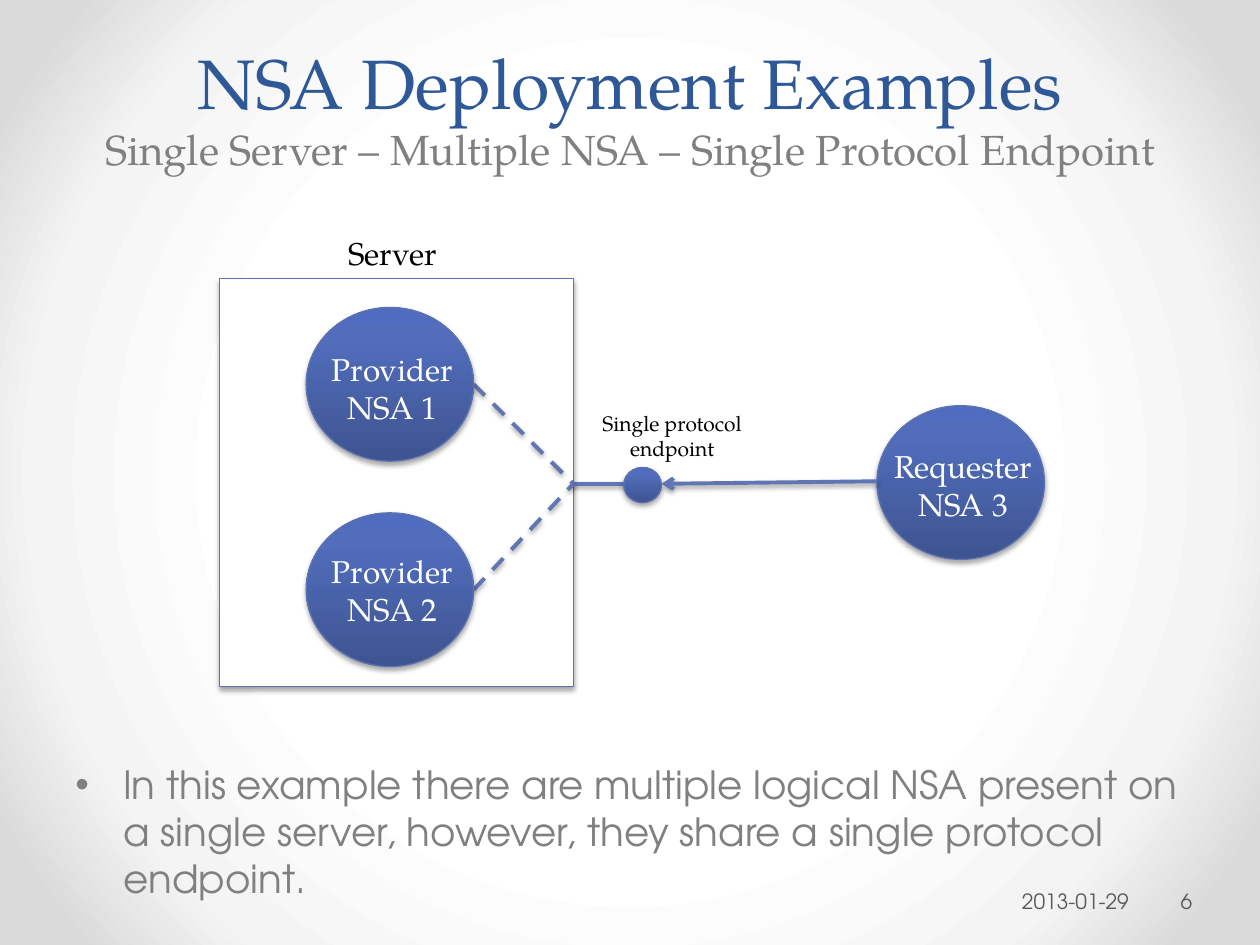
from dataclasses import dataclass

from lxml import etree
from pptx import Presentation
from pptx.dml.color import RGBColor
from pptx.enum import dml, shapes, text
from pptx.oxml.ns import qn
from pptx.util import Inches, Pt


@dataclass(frozen=True)
class Theme:
    serif: str = "TeX Gyre Pagella"
    sans: str = "TeX Gyre Adventor"
    title: str = "2F5897"
    grey: str = "808080"
    footer: str = "595959"
    black: str = "000000"
    white: str = "FFFFFF"
    outline: str = "5C72B2"
    link: str = "6076B4"
    node: tuple = ((0, "3E5490"), (80, "516DBB"), (100, "4F6CBE"))
    backdrop: tuple = ((50, "FFFFFF"), (76, "F4F4F4"), (92, "DADADA"))
    title_size: float = 40
    subtitle_size: float = 24
    body_size: float = 22.2
    label_size: float = 18
    small_size: float = 12


THEME = Theme()
ALIGN = text.PP_ALIGN
ANCHOR = text.MSO_ANCHOR


def add_node(parent, tag, **attributes):
    values = {key: str(value) for key, value in attributes.items()}
    return etree.SubElement(parent, qn(tag), values)


def set_gradient(fill, parent, stops, angle=None):
    """Fill with the stops: linear at an angle, or circular from the centre."""
    fill.gradient()
    gradient = parent.find(qn("a:gradFill"))
    for child in list(gradient):
        gradient.remove(child)
    stop_list = add_node(gradient, "a:gsLst")
    for position, color in stops:
        stop = add_node(stop_list, "a:gs", pos=position * 1000)
        add_node(stop, "a:srgbClr", val=color)
    if angle is None:
        circle = add_node(gradient, "a:path", path="circle")
        add_node(circle, "a:fillToRect", l=50000, t=50000, r=50000, b=50000)
    else:
        add_node(gradient, "a:lin", ang=angle * 60000, scaled=0)


def add_shadow(properties, distance, opacity):
    effects = properties.find(qn("a:effectLst"))
    if effects is None:
        effects = add_node(properties, "a:effectLst")
    shadow = add_node(effects, "a:outerShdw", blurRad=Pt(3.1), dist=Pt(distance),
                      dir=90 * 60000, rotWithShape=0)
    color = add_node(shadow, "a:srgbClr", val=THEME.black)
    add_node(color, "a:alpha", val=opacity * 1000)


def add_span(para, words, *, size, color, font):
    span = para.add_run()
    span.text = words
    span.font.size = Pt(size)
    span.font.name = font
    span.font.color.rgb = RGBColor.from_string(color)


def add_text(page, box, words, *, size=THEME.label_size, color=THEME.black,
             font=THEME.serif, align=ALIGN.CENTER, anchor=ANCHOR.TOP,
             wrap=True, left_inset=0.1, right_inset=0.1):
    frame = page.shapes.add_textbox(*map(Inches, box)).text_frame
    frame.word_wrap = wrap
    frame.vertical_anchor = anchor
    frame.margin_left, frame.margin_right = Inches(left_inset), Inches(right_inset)
    para = frame.paragraphs[0]
    para.alignment = align
    add_span(para, words, size=size, color=color, font=font)
    return para


def add_block(page, kind, box):
    shape = page.shapes.add_shape(kind, *map(Inches, box))
    shape.line.color.rgb = RGBColor.from_string(THEME.outline)
    shape.line.width = Pt(0.75)
    shape.shadow.inherit = False
    add_shadow(shape.element.spPr, 1.8, 35)
    return shape


def add_disc(page, box):
    disc = add_block(page, shapes.MSO_SHAPE.OVAL, box)
    set_gradient(disc.fill, disc.element.spPr, THEME.node, angle=270)


def add_link(page, start, end, *, dashed=False, arrow=False):
    link = page.shapes.add_connector(
        shapes.MSO_CONNECTOR.STRAIGHT, *map(Inches, start + end))
    link.line.color.rgb = RGBColor.from_string(THEME.link)
    link.line.width = Pt(2.25)
    if dashed:
        link.line.dash_style = dml.MSO_LINE.DASH
    if arrow:
        add_node(link.line._get_or_add_ln(), "a:tailEnd", type="arrow")
    add_shadow(link.element.spPr, 1.6, 38)


def draw_heading(page, box):
    para = add_text(page, box, "NSA Deployment Examples", size=THEME.title_size,
                    color=THEME.title, anchor=ANCHOR.BOTTOM)
    para.add_line_break()
    add_span(para, "Single Server – Multiple NSA – Single Protocol Endpoint",
             size=THEME.subtitle_size, color=THEME.grey, font=THEME.serif)


def draw_diagram(page, box):
    left, top, width, height = box

    def at(x, y):
        return left + x, top + y

    # Server with its caption
    server_width, server_top = 2.81, 0.4
    server = add_block(page, shapes.MSO_SHAPE.RECTANGLE,
                       at(0, server_top) + (server_width, height - server_top))
    server.fill.solid()
    server.fill.fore_color.rgb = RGBColor.from_string(THEME.white)
    add_text(page, at(0.92, 0) + (0.91, 0.4), "Server", wrap=False)

    # Links from the providers to the shared port, then to the endpoint
    node_width, node_height = 1.33, 1.22
    port = at(server_width, 2.03)
    provider_x, requester_x = 0.69, 5.22
    provider_tops = (0.63, 2.26)
    add_link(page, port, at(3.23, 2.03))
    add_disc(page, at(3.21, 1.9) + (0.3, 0.28))
    for y in provider_tops:
        edge = at(provider_x + node_width, y + node_height / 2)
        add_link(page, edge, port, dashed=True)

    # Agents: name, position, drop of the label inside the disc
    agents = (
        ("Provider NSA 1", provider_x, provider_tops[0], 0.29),
        ("Provider NSA 2", provider_x, provider_tops[1], 0.26),
        ("Requester NSA 3", requester_x, 1.41, 0.28),
    )
    for name, x, y, drop in agents:
        add_disc(page, at(x, y) + (node_width, node_height))
        add_text(page, at(x + 0.01, y + drop) + (1.35, 0.71), name,
                 color=THEME.white)

    # Request to the endpoint
    add_link(page, at(requester_x, 2.01), at(3.51, 2.03), arrow=True)
    add_text(page, at(server_width, 1.4) + (1.57, 0.5),
             "Single protocol endpoint", size=THEME.small_size)


def draw_body(page, box):
    para = add_text(
        page, box,
        "In this example there are multiple logical NSA present on a single "
        "server, however, they share a single protocol endpoint.",
        size=THEME.body_size, color=THEME.grey, font=THEME.sans, align=ALIGN.LEFT)
    para.space_before = Pt(THEME.body_size * 0.2)
    properties = para._p.get_or_add_pPr()
    properties.set("marL", str(Inches(0.38)))
    properties.set("indent", str(Inches(-0.38)))
    add_node(properties, "a:buFont", typeface="Arial")
    add_node(properties, "a:buChar", char="•")


def draw_footer(page, box):
    left, top, width, height = box
    style = dict(size=THEME.small_size, color=THEME.footer, font=THEME.sans,
                 anchor=ANCHOR.MIDDLE, right_inset=0.05)
    add_text(page, (left, top, 2.28, height), "2013-01-29",
             align=ALIGN.RIGHT, **style)
    number_width = 0.61
    add_text(page, (left + width - number_width, top, number_width, height), "6",
             align=ALIGN.LEFT, left_inset=0.03, **style)


def main():
    deck = Presentation()
    deck.slide_width, deck.slide_height = Inches(10), Inches(7.5)
    page = deck.slides.add_slide(deck.slide_layouts[6])
    fill = page.background.fill
    set_gradient(fill, page.element.cSld.bg.bgPr, THEME.backdrop)
    draw_heading(page, (0.5, 0, 9, 1.43))
    draw_diagram(page, (1.74, 1.81, 6.58, 3.64))
    draw_body(page, (0.5, 5.99, 9, 1.06))
    draw_footer(page, (6.73, 6.95, 3.22, 0.4))
    deck.save("out.pptx")


if __name__ == "__main__":
    main()
